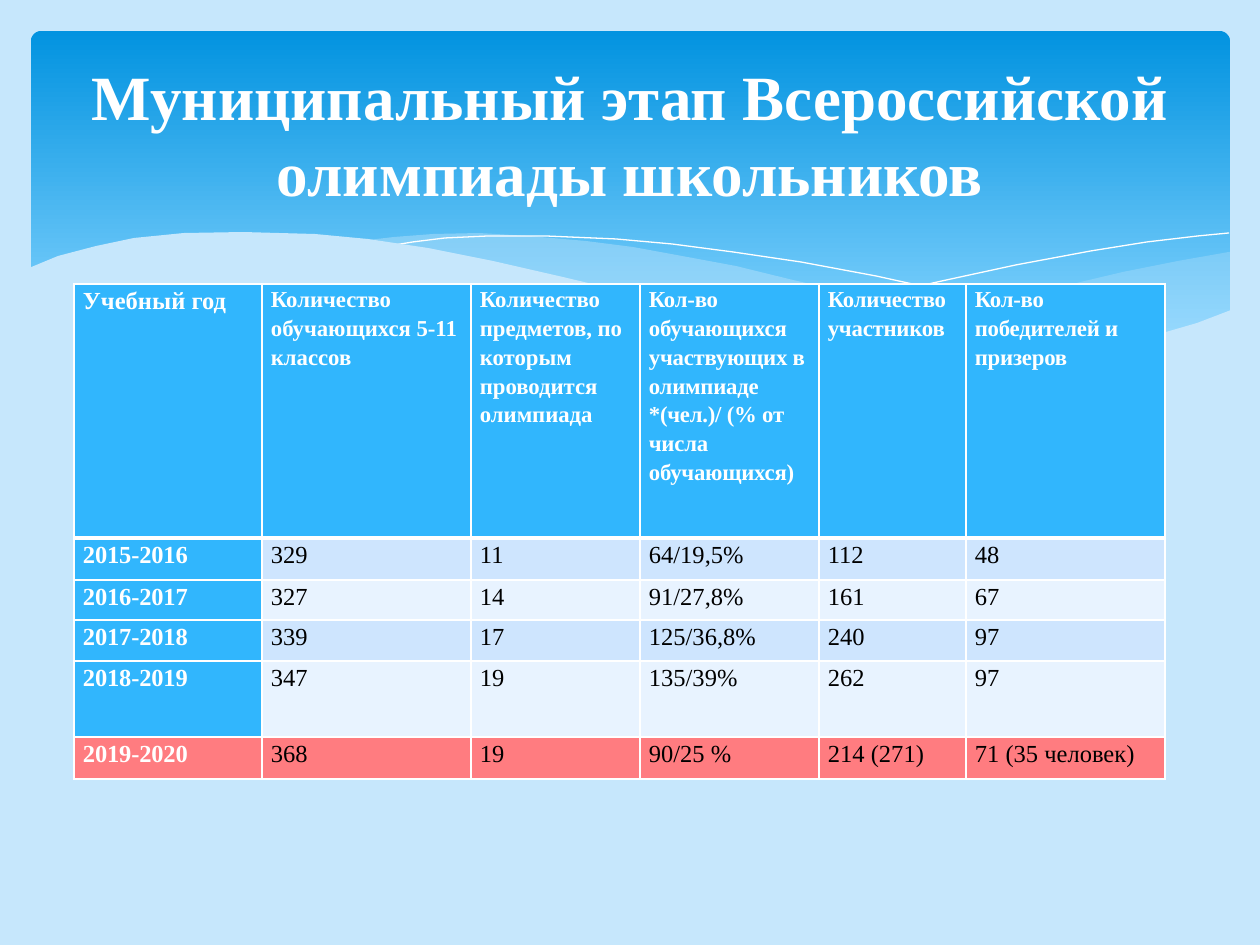
"""Build the slide on the municipal stage of the school olympiad."""
from lxml.etree import SubElement
from pptx import Presentation
from pptx.dml.color import RGBColor
from pptx.enum.shapes import MSO_SHAPE as Preset
from pptx.enum.text import MSO_ANCHOR as Anchor, PP_ALIGN as Align
from pptx.oxml.ns import qn
from pptx.util import Pt

PX = 914400 / 126
FONT = "Times New Roman"
PALE, BLUE, WHITE, BLACK, RED = "C6E7FC", "31B6FD", "FFFFFF", "000000", "FF7C80"
BANDS = ["CEE5FE", "E8F3FF"]

TITLE = "Муниципальный этап Всероссийской олимпиады школьников"
HEADERS = [
    "Учебный год",
    "Количество обучающихся 5-11 классов",
    "Количество предметов, по которым проводится олимпиада",
    "Кол-во обучающихся участвующих в олимпиаде *(чел.)/ (% от числа обучающихся)",
    "Количество участников",
    "Кол-во победителей и призеров",
]
YEARS = [
    ("2015-2016", "329", "11", "64/19,5%", "112", "48"),
    ("2016-2017", "327", "14", "91/27,8%", "161", "67"),
    ("2017-2018", "339", "17", "125/36,8%", "240", "97"),
    ("2018-2019", "347", "19", "135/39%", "262", "97"),
    ("2019-2020", "368", "19", "90/25 %", "214 (271)", "71 (35 человек)"),
]
COLUMN_WIDTHS = [188, 209, 169, 179, 147, 199]
ROW_HEIGHTS = [254, 42, 40, 41, 76, 42]
TABLE_LEFT, TABLE_TOP = 74, 284

RIGHT_WAVE = [
    (1229, 252), (1178, 261), (1123, 272), (1085, 281), (1014, 299), (949, 312),
    (890, 324), (833, 334), (871, 339), (922, 345), (969, 349), (1026, 350),
    (1076, 348), (1120, 343), (1160, 334), (1196, 324), (1230, 311), (1230, 252),
]
MIDDLE_WAVE = [
    (1125, 344), (1055, 334), (977, 320), (890, 302), (793, 280), (736, 266),
    (682, 256), (633, 247), (586, 241), (529, 236), (479, 233), (433, 234),
    (394, 237), (360, 241), (407, 247), (456, 256), (509, 266), (566, 280),
    (668, 302), (757, 321), (838, 335), (910, 345), (974, 349), (1031, 350),
    (1080, 349),
]
LONG_LINE = [
    (389, 246), (413, 242), (445, 238), (488, 236), (546, 236), (616, 239),
    (672, 244), (733, 252), (801, 262), (876, 276), (958, 294), (1047, 316),
    (1143, 343),
]
SHORT_LINE = [
    (772, 324), (823, 310), (876, 296), (942, 281), (1016, 265), (1091, 251),
    (1147, 242), (1198, 236), (1229, 233),
]
FRONT_WAVE = [
    (1231, 310), (1197, 323), (1159, 334), (1118, 341), (1071, 347), (1019, 349),
    (959, 347), (892, 340), (816, 330), (730, 315), (634, 294), (563, 277),
    (493, 261), (428, 248), (368, 239), (315, 234), (243, 232), (184, 233),
    (134, 238), (96, 246), (58, 256), (29, 268), (29, 415), (1231, 415),
]


def px(length):
    return round(length * PX)


def color(code):
    return RGBColor.from_string(code)


def paint(fill, code, opacity=100):
    fill.solid()
    fill.fore_color.rgb = color(code)
    if opacity < 100:
        tint = fill._xPr.find(qn("a:solidFill"))[0]
        SubElement(tint, qn("a:alpha"), val=str(opacity * 1000))


def write(frame, text, size, ink, bold=False, align=Align.LEFT,
          line_spacing=None, after=0, tracking=0):
    paragraph = frame.paragraphs[0]
    paragraph.alignment = align
    paragraph.line_spacing = line_spacing
    paragraph.space_after = Pt(after)
    run = paragraph.add_run()
    run.text = text
    run.font.name, run.font.size, run.font.bold = FONT, Pt(size), bold
    run.font.color.rgb = color(ink)
    if tracking:
        run.font._element.set("spc", str(tracking))


def add_curve(shapes, points, opacity=None):
    closed = opacity is not None
    builder = shapes.build_freeform(*points[0], scale=PX)
    builder.add_line_segments(points[1:], close=closed)
    curve = builder.convert_to_shape()
    curve.shadow.inherit = False
    if closed:
        paint(curve.fill, PALE, opacity)
        curve.line.fill.background()
    else:
        curve.fill.background()
        paint(curve.line.fill, WHITE)
        curve.line.width = 0


def add_banner(shapes):
    banner = shapes.add_shape(Preset.ROUNDED_RECTANGLE, px(31), px(31), px(1199), px(340))
    banner.adjustments[0] = 0.03
    banner.shadow.inherit = False
    banner.line.fill.background()
    banner.fill.gradient()
    banner.fill.gradient_angle = 270
    for stop, (position, code) in zip(banner.fill.gradient_stops,
                                      [(0, "0293E0"), (0.9, "83D3FE")]):
        stop.position, stop.color.rgb = position, color(code)


def add_borders(cell, top, bottom):
    properties = cell._tc.get_or_add_tcPr()
    for side, points in zip("LRTB", (1, 1, top, bottom)):
        border = SubElement(properties, qn(f"a:ln{side}"), w=str(Pt(points)))
        ink = SubElement(border, qn("a:solidFill"))
        SubElement(ink, qn("a:srgbClr"), val=WHITE)


def add_results(shapes):
    rows = [HEADERS, *YEARS]
    results = shapes.add_table(len(rows), len(HEADERS), px(TABLE_LEFT), px(TABLE_TOP),
                               px(sum(COLUMN_WIDTHS)), px(sum(ROW_HEIGHTS))).table
    for column, width in zip(results.columns, COLUMN_WIDTHS):
        column.width = px(width)
    for r, (row, height) in enumerate(zip(rows, ROW_HEIGHTS)):
        results.rows[r].height = px(height)
        header, latest = r == 0, r == len(rows) - 1
        for c, text in enumerate(row):
            cell = results.cell(r, c)
            year = c == 0 and not header
            label = header or c == 0
            cell.margin_left = cell.margin_right = px(9)
            cell.margin_top = cell.margin_bottom = 0
            add_borders(cell, top=3 if r == 1 else 1, bottom=3 if header else 1)
            paint(cell.fill, RED if latest else BLUE if label else BANDS[(r - 1) % 2])
            write(cell.text_frame, text, size=13 if header and c else 14,
                  ink=WHITE if label else BLACK, bold=label,
                  align=Align.JUSTIFY if year else Align.LEFT,
                  line_spacing=1.15, after=10,
                  tracking=-10 if year or header and c > 2 else 0)


def main():
    deck = Presentation()
    deck.slide_width, deck.slide_height = px(1260), px(945)
    slide = deck.slides.add_slide(deck.slide_layouts[5])
    shapes = slide.shapes
    paint(slide.background.fill, PALE)
    add_banner(shapes)
    add_curve(shapes, RIGHT_WAVE, opacity=29)
    add_curve(shapes, MIDDLE_WAVE, opacity=40)
    add_curve(shapes, LONG_LINE)
    add_curve(shapes, SHORT_LINE)
    add_curve(shapes, FRONT_WAVE, opacity=100)
    add_results(shapes)

    title = shapes.title
    title.left, title.top, title.width, title.height = map(px, (63, 47, 1134, 173))
    title.text_frame.vertical_anchor = Anchor.MIDDLE
    write(title.text_frame, TITLE, size=36, ink=WHITE, bold=True, align=Align.CENTER)
    shapes._spTree.append(title._element)
    deck.save("out.pptx")


if __name__ == "__main__":
    main()
